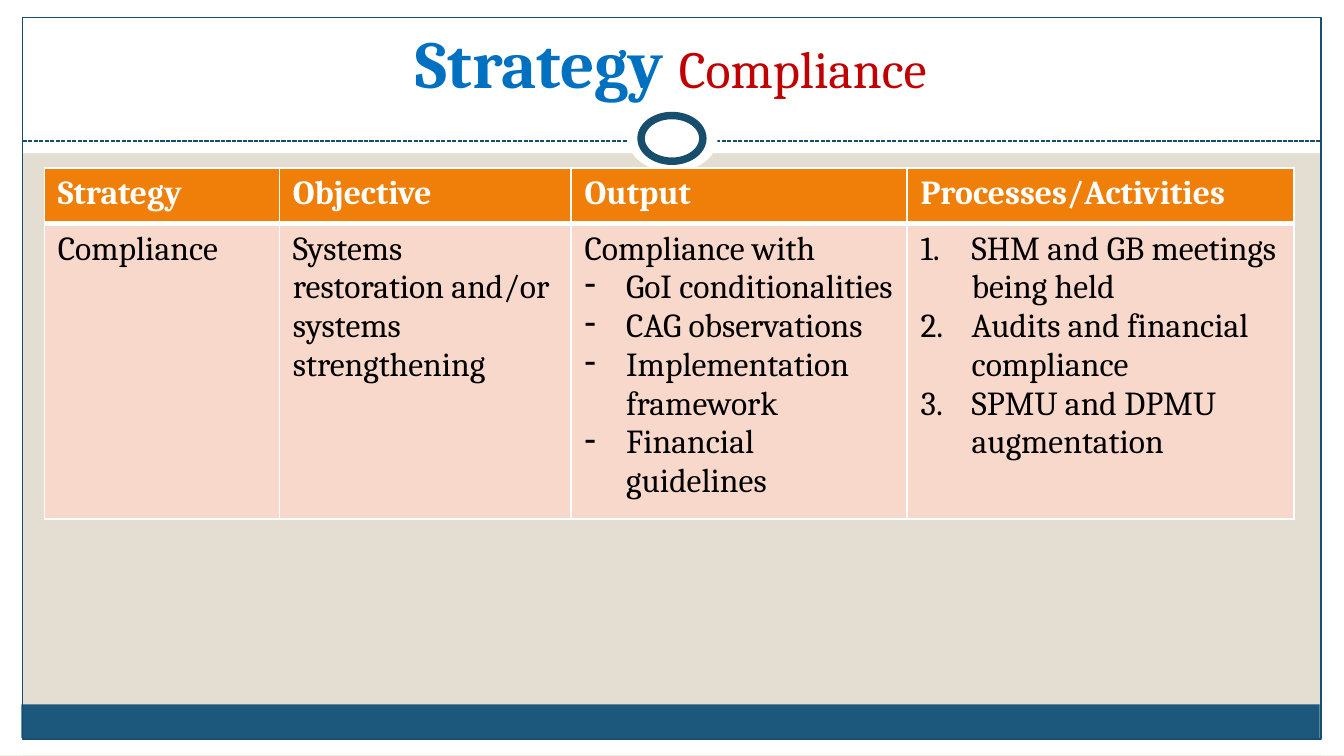
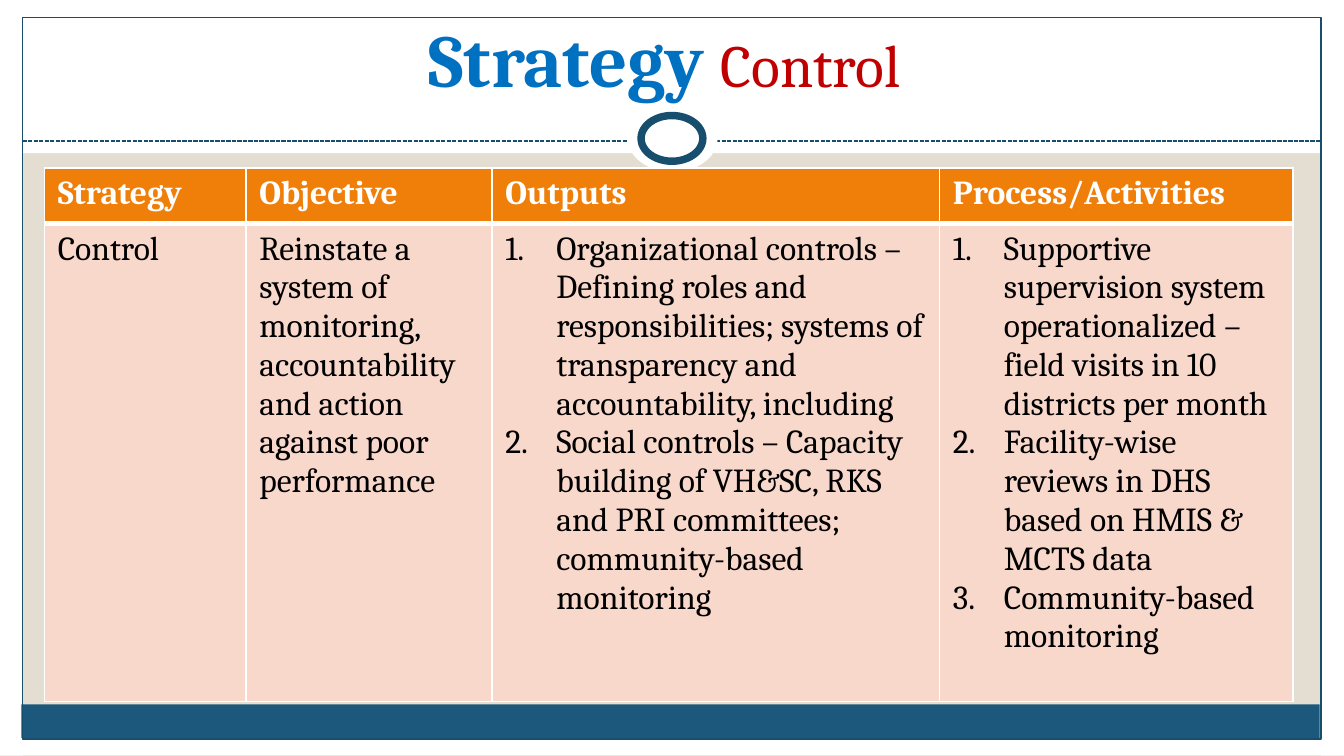
"""Build two strategy slides, each with a framed title band and a table."""
import dataclasses

import lxml.etree
import pptx
import pptx.dml.color
import pptx.enum.dml
import pptx.enum.shapes
import pptx.enum.text
import pptx.oxml.ns
import pptx.util

Inches = pptx.util.Inches
Pt = pptx.util.Pt
RGB = pptx.dml.color.RGBColor.from_string
MSO = pptx.enum.shapes.MSO_SHAPE
qn = pptx.oxml.ns.qn


@dataclasses.dataclass(frozen=True)
class Theme:
    font: str = "Cambria"
    sand: str = "E3DED1"
    white: str = "FFFFFF"
    black: str = "000000"
    footer: str = "1B587C"
    frame: str = "184E6D"
    blue: str = "0070C0"
    red: str = "C00000"
    header: str = "F07F09"
    body: str = "F9D8CC"
    table_size: float = 18
    thin: float = 0.75
    ring: float = 4
    grid: float = 1
    header_rule: float = 3


theme = Theme()

decor = [
    (MSO.RECTANGLE, (0, 5.5, 10, 0.12), theme.white, None),
    (MSO.RECTANGLE, (0, 0, 10, 1.14), theme.white, None),
    (MSO.RECTANGLE, (0, 0, 0.17, 5.62), theme.white, None),
    (MSO.RECTANGLE, (9.83, 0, 0.17, 5.62), theme.white, None),
    (MSO.RECTANGLE, (0.16, 5.24, 9.66, 0.25), theme.footer, None),
    (MSO.RECTANGLE, (0.17, 0.13, 9.66, 5.37), None, theme.thin),
    ("rule", (0.17, 1.05, 9.83, 1.05), None, theme.thin),
    (MSO.OVAL, (4.67, 0.78, 0.67, 0.5), theme.white, None),
    (MSO.OVAL, (4.77, 0.86, 0.46, 0.34), theme.white, theme.ring),
]

slides = [
    {
        "title": [("Strategy ", 36, theme.blue, True), ("Compliance", 27.9, theme.red, False)],
        "cols": [1.75, 2.17, 2.5, 2.88],
        "body_height": 2.11,
        "header": ["Strategy", "Objective", "Output", "Processes/Activities"],
        "body": [
            [("", "Compliance")],
            [("", "Systems restoration and/or systems strengthening")],
            [
                ("", "Compliance with"),
                ("-", "GoI conditionalities"),
                ("-", "CAG observations"),
                ("-", "Implementation framework"),
                ("-", "Financial guidelines"),
            ],
            [
                ("1.", "SHM and GB meetings being held"),
                ("1.", "Audits and financial compliance"),
                ("1.", "SPMU and DPMU augmentation"),
            ],
        ],
    },
    {
        "title": [("Strategy ", 40, theme.blue, True), ("Control ", 32, theme.red, False)],
        "cols": [1.5, 1.83, 3.33, 2.63],
        "body_height": 3.56,
        "header": ["Strategy", "Objective", "Outputs", "Process/Activities"],
        "body": [
            [("", "Control")],
            [("", "Reinstate a system of monitoring, accountability and action against poor performance")],
            [
                ("1.", "Organizational controls – Defining roles and responsibilities; "
                       "systems of transparency and accountability, including"),
                ("1.", "Social controls – Capacity building of VH&SC, RKS and PRI committees; "
                       "community-based monitoring"),
            ],
            [
                ("1.", "Supportive supervision system operationalized – field visits in 10 districts per month"),
                ("1.", "Facility-wise reviews in DHS based on HMIS & MCTS data"),
                ("1.", "Community-based monitoring"),
            ],
        ],
    },
]


def add_run(p, text, size, color, bold):
    r = p.add_run()
    r.text = text
    r.font.name = theme.font
    r.font.size = Pt(size)
    r.font.bold = bold
    r.font.color.rgb = RGB(color)


def fill_cell(cell, paragraphs, fill, color, bold, top, bottom):
    cell.fill.solid()
    cell.fill.fore_color.rgb = RGB(fill)
    tcPr = cell._tc.get_or_add_tcPr()
    widths = {"a:lnL": theme.grid, "a:lnR": theme.grid, "a:lnT": top, "a:lnB": bottom}
    for i, (tag, width) in enumerate(widths.items()):
        ln = lxml.etree.Element(qn(tag), w=str(Pt(width)))
        solid = lxml.etree.SubElement(ln, qn("a:solidFill"))
        lxml.etree.SubElement(solid, qn("a:srgbClr"), val=theme.white)
        tcPr.insert(i, ln)
    tf = cell.text_frame
    for i, (bullet, text) in enumerate(paragraphs):
        p = tf.add_paragraph() if i else tf.paragraphs[0]
        if bullet:
            pPr = p._p.get_or_add_pPr()
            indent = Inches(0.31 if bullet == "-" else 0.38)
            pPr.set("marL", str(indent))
            pPr.set("indent", str(-indent))
            if bullet == "-":
                lxml.etree.SubElement(pPr, qn("a:buFontTx"))
                lxml.etree.SubElement(pPr, qn("a:buChar"), char=bullet)
            else:
                lxml.etree.SubElement(pPr, qn("a:buAutoNum"), type="arabicPeriod")
        add_run(p, text, theme.table_size, color, bold)


prs = pptx.Presentation()
prs.slide_width = Inches(10)
prs.slide_height = prs.slide_width * 9 // 16

for content in slides:
    s = prs.slides.add_slide(prs.slide_layouts[6])
    s.background.fill.solid()
    s.background.fill.fore_color.rgb = RGB(theme.sand)

    for kind, box, fill, line in decor:
        if kind == "rule":
            sp = s.shapes.add_connector(
                pptx.enum.shapes.MSO_CONNECTOR.STRAIGHT, *map(Inches, box))
            sp.line.dash_style = pptx.enum.dml.MSO_LINE.SQUARE_DOT
            lxml.etree.SubElement(sp._element.spPr, qn("a:effectLst"))
        else:
            sp = s.shapes.add_shape(kind, *map(Inches, box))
            sp.shadow.inherit = False
            if fill:
                sp.fill.solid()
                sp.fill.fore_color.rgb = RGB(fill)
            else:
                sp.fill.background()
        if line:
            sp.line.color.rgb = RGB(theme.frame)
            sp.line.width = Pt(line)
        else:
            sp.line.fill.background()

    title = s.shapes.add_textbox(Inches(0.33), Inches(0.19), Inches(9.33), Inches(0.62))
    tf = title.text_frame
    tf.word_wrap = True
    tf.vertical_anchor = pptx.enum.text.MSO_ANCHOR.BOTTOM
    p = tf.paragraphs[0]
    p.alignment = pptx.enum.text.PP_ALIGN.CENTER
    for run in content["title"]:
        add_run(p, *run)

    heights = [0.41, content["body_height"]]
    table = s.shapes.add_table(
        2, len(content["cols"]), Inches(0.33), Inches(1.25),
        Inches(9.3), Inches(sum(heights))).table
    for row, height in zip(table.rows, heights):
        row.height = Inches(height)
    for i, width in enumerate(content["cols"]):
        table.columns[i].width = Inches(width)
        fill_cell(table.cell(0, i), [("", content["header"][i])],
                  theme.header, theme.white, True, theme.grid, theme.header_rule)
        fill_cell(table.cell(1, i), content["body"][i],
                  theme.body, theme.black, False, theme.header_rule, theme.grid)

prs.save("out.pptx")
